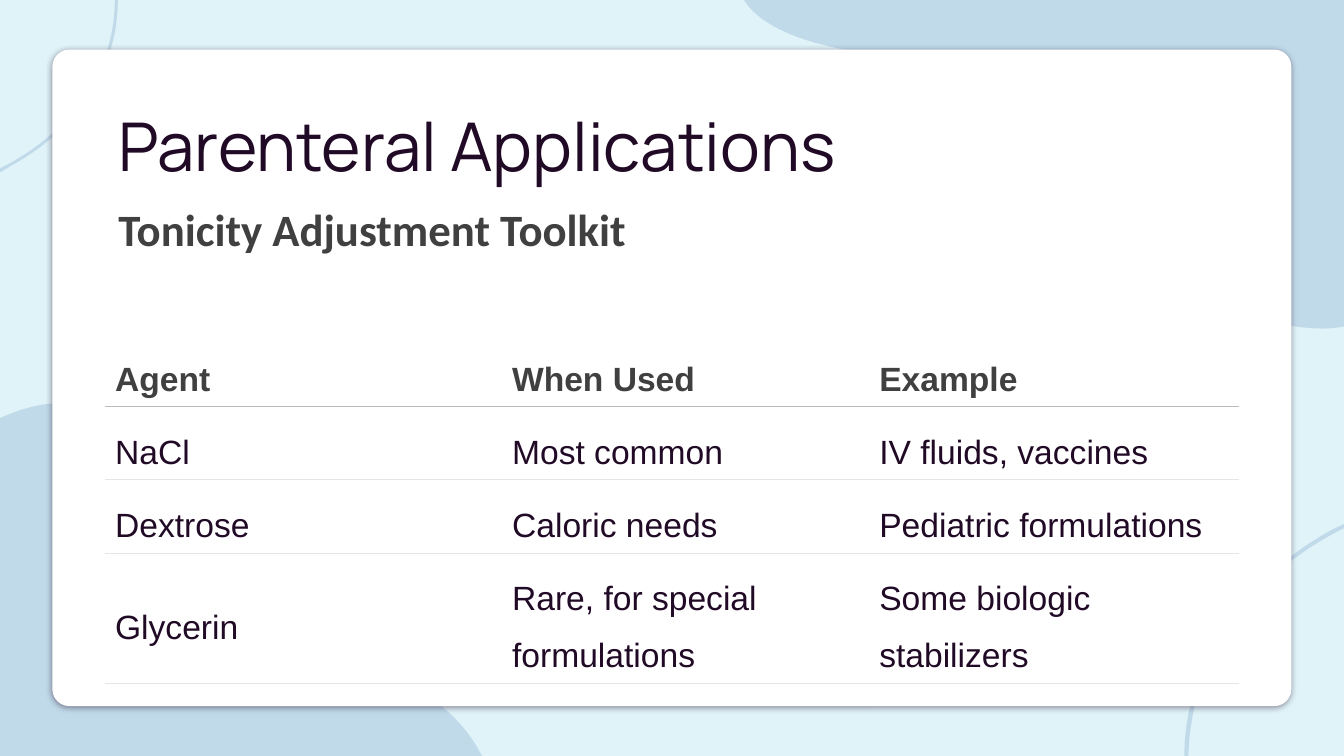
from pptx import Presentation
from pptx.dml.color import RGBColor
from pptx.enum.shapes import MSO_SHAPE as Shape
from pptx.enum.text import MSO_ANCHOR as Anchor, MSO_AUTO_SIZE as AutoSize, PP_ALIGN as Align
from pptx.oxml import parse_xml
from pptx.oxml.ns import nsdecls
from pptx.util import Pt

SKY = RGBColor(0xDF, 0xF3, 0xF8)
MIST = RGBColor(0xA0, 0xBF, 0xDB)
WHITE = RGBColor(0xFF, 0xFF, 0xFF)
PLUM = RGBColor(0x21, 0x0A, 0x26)
CHARCOAL = RGBColor(0x40, 0x40, 0x40)
HEADER_RULE = RGBColor(0xBB, 0xBB, 0xBB)
ROW_RULE = RGBColor(0xE5, 0xE5, 0xE5)

SLIDE_W, SLIDE_H = 960, 540
TITLE_FORMAT = {"name": "Manrope", "size": Pt(48), "bold": False}
SUBTITLE_FORMAT = {"name": "Calibri", "size": Pt(32), "bold": True}
HEADER_FORMAT = {"name": "Arial", "size": Pt(24), "bold": True}
BODY_FORMAT = {**HEADER_FORMAT, "bold": False}

# Each outline is a start point, then lines (x, y) and Bézier curves (six numbers).
BOTTOM_RIGHT_ARC = [
    (848.9, 540), (849.6, 505.4, 861.1, 470.2, 882, 442.1),
    (902.2, 414, 929.5, 392.4, 960, 377.3), (960, 374.4),
    (956.9, 375.8, 953.3, 377.3, 949.7, 379.4),
    (925.2, 393.1, 902.2, 411.8, 884.2, 434.2),
    (866.2, 457.9, 853.2, 485.3, 848.2, 514.1),
    (846.7, 522.7, 846, 531.4, 846, 540)]
BOTTOM_LEFT_BLOB = [
    (43.2, 288), (20.9, 288, 0, 298.8, 0, 298.8), (0, 540), (344.2, 540),
    (300.2, 452.9, 164.2, 469.4, 107.3, 452.2),
    (51.1, 435.6, 113, 352.1, 82.8, 307.4),
    (72, 292.3, 57.6, 288, 43.2, 288)]
TOP_RIGHT_BLOB = [
    (531.4, 0), (547.2, 25.2, 599, 41.8, 683.3, 41.8),
    (686.2, 41.8, 689.8, 41.8, 692.6, 41.8),
    (694.1, 41.8, 694.8, 41.8, 696.2, 41.8),
    (822.2, 41.8, 769.7, 153.4, 863.3, 211.7),
    (888.5, 227.5, 920.9, 234.7, 946.1, 234.7),
    (951.1, 234.7, 955.4, 234, 960, 233.3), (960, 0)]
TOP_LEFT_ARC = [
    (82.1, 0), (82.1, 25.9, 73.4, 51.8, 58.3, 72.7),
    (43.2, 92.9, 22.3, 109.4, 0, 120.2), (0, 123.1),
    (2.9, 121.7, 5, 120.2, 7.2, 118.8),
    (25.9, 108.7, 43.2, 95, 56.2, 78.5),
    (69.8, 61.2, 79.2, 41, 82.8, 19.4),
    (83.5, 13, 84.2, 6.5, 84.2, 0)]

AGENTS = [
    ("Agent", "When Used", "Example"),
    ("NaCl", "Most common", "IV fluids, vaccines"),
    ("Dextrose", "Caloric needs", "Pediatric formulations"),
    ("Glycerin", "Rare, for special formulations", "Some biologic stabilizers"),
]
COLUMN_WIDTHS = (285.4, 262.3, 262.3)
ROW_HEIGHTS = (52.2, 52.2, 52.2, 93)


def set_format(target, values):
    for name, value in values.items():
        setattr(target, name, value)


def write(frame, text, font_format, color, line_spacing):
    frame.text = text
    paragraph = frame.paragraphs[0]
    set_format(paragraph, {"alignment": Align.LEFT, "line_spacing": line_spacing})
    set_format(paragraph.font, font_format)
    paragraph.font.color.rgb = color


def add_wave(slide, outline):
    """Draw the outline with straight sides, then bend the sides that are curves."""
    start, *ends = [(Pt(segment[-2]), Pt(segment[-1])) for segment in outline]
    builder = slide.shapes.build_freeform(*start)
    builder.add_line_segments(ends, close=True)
    wave = builder.convert_to_shape()
    for side, segment in zip(list(wave._element.iter("{*}lnTo")), outline[1:]):
        if len(segment) == 6:
            points = "".join(f'<a:pt x="{Pt(x) - wave.left}" y="{Pt(y) - wave.top}"/>'
                             for x, y in zip(segment[::2], segment[1::2]))
            side.getparent().replace(side, parse_xml(
                f'<a:cubicBezTo {nsdecls("a")}>{points}</a:cubicBezTo>'))
    wave.shadow.inherit = False
    wave.line.fill.background()
    wave.fill.solid()
    wave.fill.fore_color.rgb = MIST
    wave.fill._xPr.solidFill[0].append(
        parse_xml(f'<a:alpha {nsdecls("a")} val="48000"/>'))


def add_backdrop(slide):
    slide.background.fill.solid()
    slide.background.fill.fore_color.rgb = SKY
    for outline in (BOTTOM_RIGHT_ARC, BOTTOM_LEFT_BLOB, TOP_RIGHT_BLOB, TOP_LEFT_ARC):
        add_wave(slide, outline)


def add_card(slide, left, top, width, height):
    card = slide.shapes.add_shape(Shape.ROUNDED_RECTANGLE, Pt(left), Pt(top), Pt(width), Pt(height))
    card.adjustments[0] = 0.026
    card.fill.solid()
    card.fill.fore_color.rgb = WHITE
    card.line.fill.background()
    card.shadow.inherit = False
    card._element.spPr.find("{*}effectLst").append(parse_xml(
        f'<a:outerShdw {nsdecls("a")} blurRad="{Pt(4.5)}" dist="{Pt(1.5)}" dir="5400000" '
        f'algn="t" rotWithShape="0"><a:srgbClr val="{PLUM}"><a:alpha val="50000"/>'
        '</a:srgbClr></a:outerShdw>'))


def set_frame(frame):
    inset = Pt(9.6)
    set_format(frame, {
        "word_wrap": True, "auto_size": AutoSize.NONE, "vertical_anchor": Anchor.TOP,
        "margin_left": inset, "margin_right": inset,
        "margin_top": inset, "margin_bottom": inset})


def add_headings(slide, left, top):
    title = slide.shapes.title
    set_format(title, {"left": Pt(left), "top": Pt(top), "width": Pt(848), "height": Pt(75)})
    set_frame(title.text_frame)
    write(title.text_frame, "Parenteral Applications", TITLE_FORMAT, PLUM, 1.15)
    slide.shapes._spTree.append(title._element)  # bring in front of the card

    subtitle = slide.shapes.add_textbox(Pt(left), Pt(top + 95), Pt(758), Pt(310))
    set_frame(subtitle.text_frame)
    write(subtitle.text_frame, "Tonicity Adjustment Toolkit", SUBTITLE_FORMAT, CHARCOAL, Pt(21.4))
    subtitle.text_frame.paragraphs[0].space_after = Pt(10.3)


def set_borders(cell, top, bottom):
    """Draw the rules of a cell; a side without a colour gets no line."""
    properties = cell._tc.get_or_add_tcPr()
    for side, color in (("L", None), ("R", None), ("T", top), ("B", bottom)):
        fill = (f'<a:solidFill><a:srgbClr val="{color}"/></a:solidFill>'
                if color is not None else "<a:noFill/>")
        properties.append(parse_xml(
            f'<a:ln{side} {nsdecls("a")} w="{Pt(0.72)}">{fill}</a:ln{side}>'))


def add_agent_table(slide, left, top):
    table = slide.shapes.add_table(
        len(ROW_HEIGHTS), len(COLUMN_WIDTHS), Pt(left), Pt(top),
        Pt(sum(COLUMN_WIDTHS)), Pt(sum(ROW_HEIGHTS))).table
    set_format(table, {"first_row": True, "horz_banding": False})
    for column, width in zip(table.columns, COLUMN_WIDTHS):
        column.width = Pt(width)
    rules = [None, HEADER_RULE] + [ROW_RULE] * (len(AGENTS) - 1)
    for r, (row, height) in enumerate(zip(table.rows, ROW_HEIGHTS)):
        row.height = Pt(height)
        font_format, color = (BODY_FORMAT, PLUM) if r else (HEADER_FORMAT, CHARCOAL)
        for c, cell in enumerate(row.cells):
            set_borders(cell, rules[r], rules[r + 1])
            cell.fill.solid()
            cell.fill.fore_color.rgb = WHITE
            set_format(cell, {
                "vertical_anchor": Anchor.MIDDLE, "margin_left": Pt(5.4 if c else 7.2),
                "margin_right": Pt(5.4), "margin_top": Pt(5.4), "margin_bottom": Pt(5.4)})
            write(cell.text_frame, AGENTS[r][c], font_format, color, 1.5)


def main():
    deck = Presentation()
    deck.slide_width, deck.slide_height = Pt(SLIDE_W), Pt(SLIDE_H)
    slide = deck.slides.add_slide(deck.slide_layouts[5])
    add_backdrop(slide)
    add_card(slide, 37.4, 35.4, 885, 469)
    add_headings(slide, 75, 56.4)
    add_agent_table(slide, 75, 238.4)
    deck.save("out.pptx")


if __name__ == "__main__":
    main()
